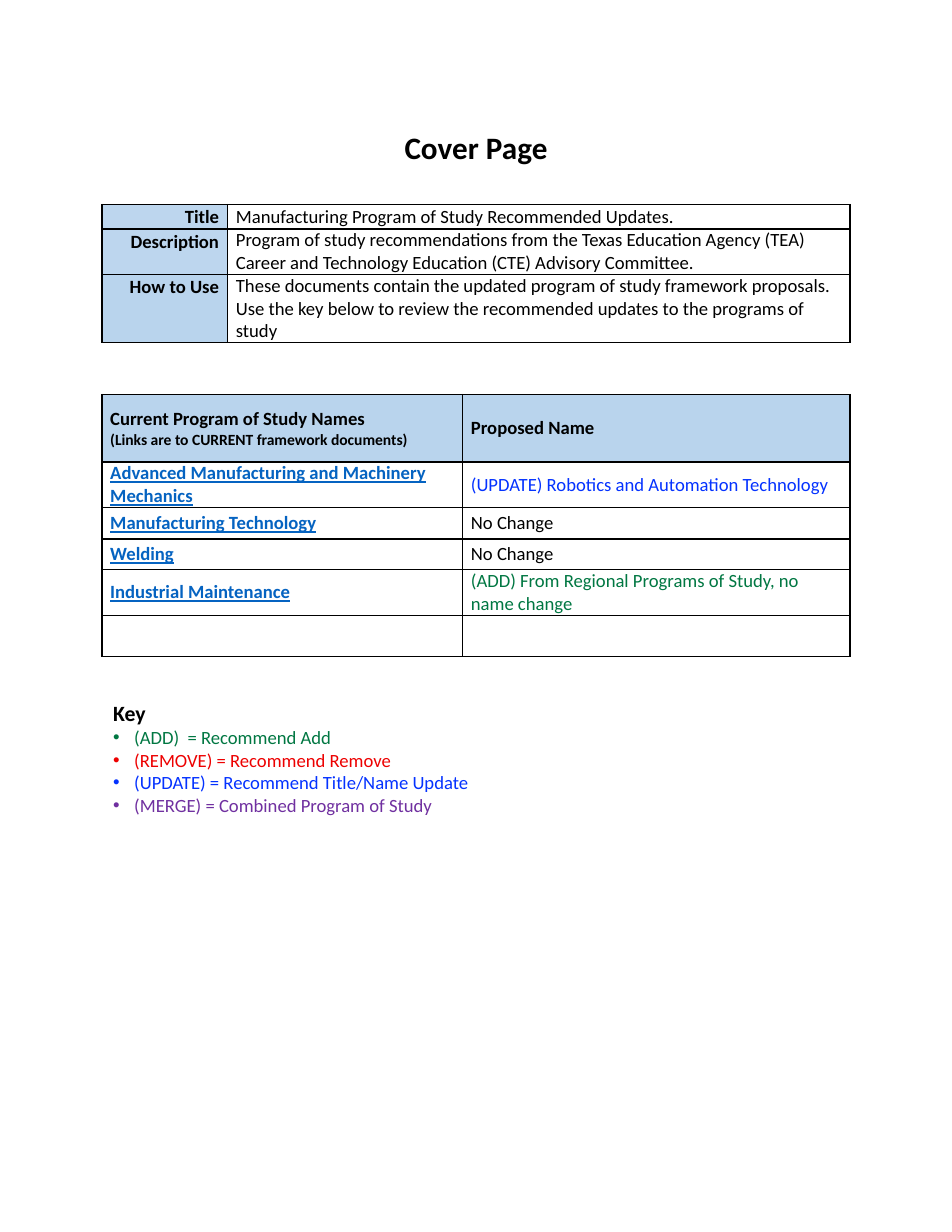
"""Build the cover page of the program of study updates."""
from lxml.etree import SubElement
from pptx import Presentation
from pptx.dml.color import RGBColor as Rgb
from pptx.enum.text import MSO_ANCHOR as Anchor, MSO_AUTO_SIZE as Auto, PP_ALIGN as Align
from pptx.oxml import parse_xml
from pptx.oxml.ns import nsdecls, qn
from pptx.util import Cm, Pt

HUES = {
    "black": "000000", "white": "FFFFFF", "pale": "BDD6EE", "sky": "B9D4ED",
    "link": "0563C1", "blue": "0432FF", "green": "007742", "red": "ED0000",
    "plum": "7030A0",
}
FONT = "Calibri"
LEFT = 2.31
TITLE = "Cover Page"

FACTS = [
    ("Title", "Manufacturing Program of Study Recommended Updates.", "pale", 1.07, 0.54),
    ("Description", "Program of study recommendations from the Texas Education Agency (TEA) "
     "Career and Technology Education (CTE) Advisory Committee.", "pale", 1, 1.02),
    ("How to Use", "These documents contain the updated program of study framework proposals. "
     "Use the key below to review the recommended updates to the programs of study",
     "sky", 1, 1.52),
]
HEADS = ["Current Program of Study Names", "Proposed Name"]
NOTE = "(Links are to CURRENT framework documents)"
NAMES = [
    ("Advanced Manufacturing and Machinery Mechanics",
     "(UPDATE) Robotics and Automation Technology", "blue", 1.02),
    ("Manufacturing Technology", "No Change", "black", 0.71),
    ("Welding", "No Change", "black", 0.7),
    ("Industrial Maintenance",
     "(ADD) From Regional Programs of Study, no name change", "green", 1.02),
    ("", "", "black", 0.94),
]
KEYS = [
    ("(ADD)  = Recommend Add", "green"),
    ("(REMOVE) = Recommend Remove", "red"),
    ("(UPDATE) = Recommend Title/Name Update", "blue"),
    ("(MERGE) = Combined Program of Study", "plum"),
]


def write(frame, text, size=12, hue="black", bold=False, line=False,
          align=Align.LEFT, space=1, more=False):
    para = frame.add_paragraph() if more else frame.paragraphs[0]
    para.alignment, para.line_spacing = align, space
    para.space_before = para.space_after = Pt(0)
    if text:
        run = para.add_run()
        run.text = text
        font = run.font
        font.name, font.size, font.bold = FONT, Pt(size), bold
        font.underline = line
        font.color.rgb = Rgb.from_string(HUES[hue])
    return para


def place(shape, left, top, width, height):
    shape.left, shape.top = Cm(left), Cm(top)
    shape.width, shape.height = Cm(width), Cm(height)


def style(cell, fill, anchor):
    cell.margin_left = cell.margin_right = Cm(0.19)
    cell.margin_top = cell.margin_bottom = 0
    cell.vertical_anchor = anchor
    if fill:
        cell.fill.solid()
        cell.fill.fore_color.rgb = Rgb.from_string(HUES[fill])
    else:
        cell.fill.background()
    props = cell._tc.get_or_add_tcPr()
    for spot, side in enumerate("LRTB"):
        props.insert(spot, parse_xml(
            f'<a:ln{side} {nsdecls("a")} w="12700"><a:solidFill>'
            f'<a:srgbClr val="{HUES["black"]}"/></a:solidFill></a:ln{side}>'))


def grid(slide, top, cols, rows, fills, anchor):
    frame = slide.shapes.add_table(len(rows), len(cols), Cm(LEFT), Cm(top),
                                   Cm(sum(cols)), Cm(sum(rows)))
    table = frame.table
    table.first_row = table.horz_banding = False
    for col, width in zip(table.columns, cols):
        col.width = Cm(width)
    for row, high, pair in zip(table.rows, rows, fills):
        row.height = Cm(high)
        for cell, fill in zip(row.cells, pair):
            style(cell, fill, anchor)
    return table


def bullet(para, mark=None):
    props = para._p.get_or_add_pPr()
    step = Cm(0.48) if mark else 0
    props.set("marL", str(step))
    props.set("indent", str(-step))
    if mark:
        SubElement(props, qn("a:buFont"), typeface="Arial")
        SubElement(props, qn("a:buChar"), char=mark)
    else:
        SubElement(props, qn("a:buNone"))


def main():
    deck = Presentation()
    deck.slide_width, deck.slide_height = Cm(21.59), Cm(27.94)
    slide = deck.slides.add_slide(deck.slide_layouts[1])
    head, body = slide.placeholders

    place(head, 0, 2.69, 21.59, 1.27)
    head.text_frame.vertical_anchor = Anchor.MIDDLE
    head.text_frame.auto_size = Auto.NONE
    write(head.text_frame, TITLE, size=20, bold=True, align=Align.CENTER)

    facts = grid(slide, 4.64, [2.85, 14.12], [fact[-1] for fact in FACTS],
                 [(fact[2], None) for fact in FACTS], Anchor.TOP)
    for row, (label, text, _, space, _) in zip(facts.rows, FACTS):
        name, note = row.cells
        write(name.text_frame, label, bold=True, align=Align.RIGHT, space=1.07)
        write(note.text_frame, text, space=space)

    names = grid(slide, 8.95, [8.18, 8.79], [1.53] + [name[-1] for name in NAMES],
                 [("sky", "sky")] + [("white", None)] * len(NAMES), Anchor.MIDDLE)
    for col, text in enumerate(HEADS):
        write(names.cell(0, col).text_frame, text, bold=True)
    write(names.cell(0, 0).text_frame, NOTE, size=10, bold=True, more=True)
    for row, (old, new, hue, _) in enumerate(NAMES, 1):
        write(names.cell(row, 0).text_frame, old, hue="link", bold=True, line=True)
        write(names.cell(row, 1).text_frame, new, hue=hue)

    place(body, LEFT, 15.75, 14.48, 2.9)
    body.text_frame.auto_size = Auto.NONE
    bullet(write(body.text_frame, "Key", size=14, bold=True))
    for text, hue in KEYS:
        bullet(write(body.text_frame, text, hue=hue, more=True), "•")

    deck.save("out.pptx")


if __name__ == "__main__":
    main()
